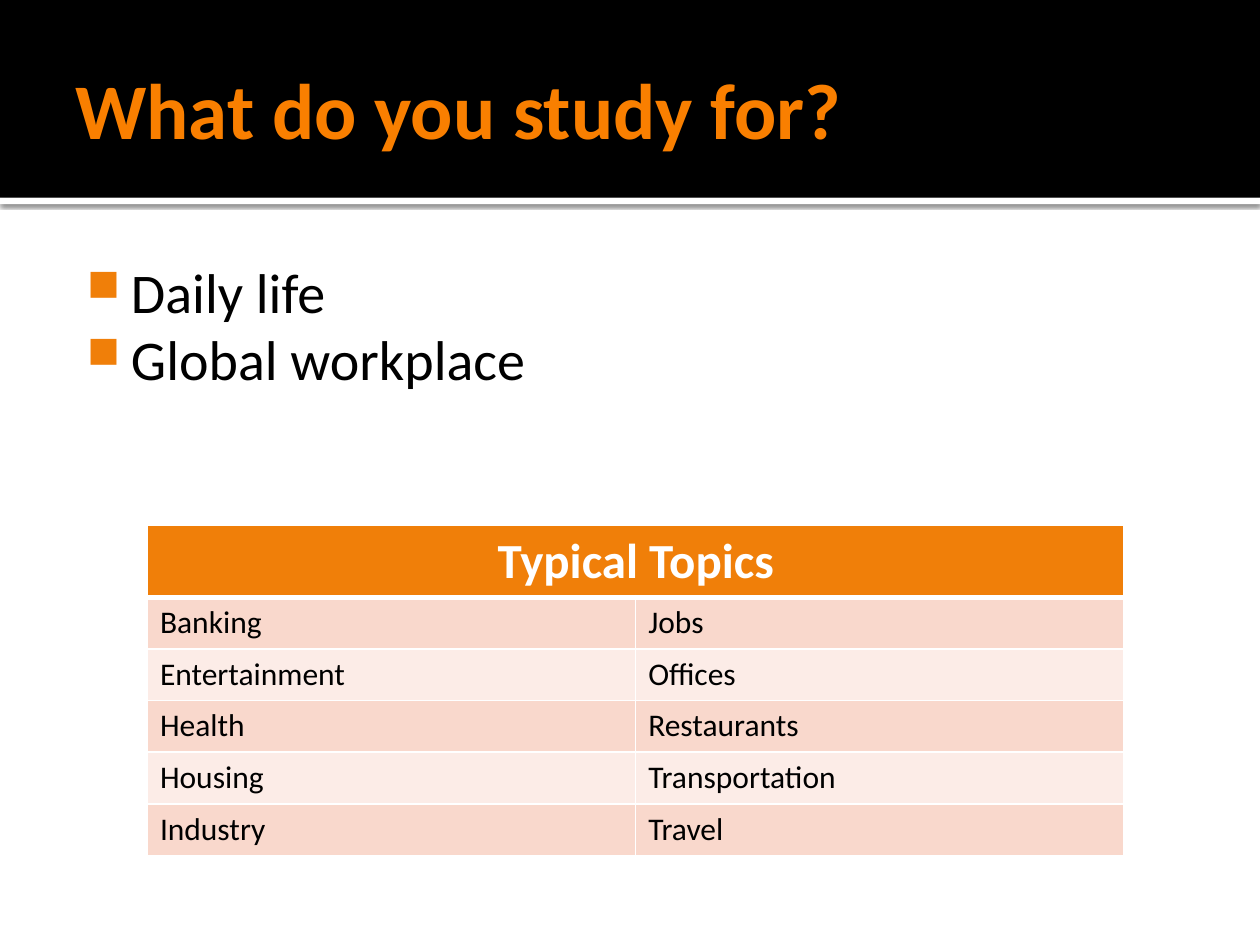
from lxml import etree
from pptx import Presentation
from pptx.dml.color import RGBColor
from pptx.enum.shapes import MSO_SHAPE
from pptx.enum.text import MSO_ANCHOR, PP_ALIGN
from pptx.oxml import parse_xml
from pptx.oxml.ns import nsdecls, qn
from pptx.util import Inches, Pt

RECT = MSO_SHAPE.RECTANGLE
MIDDLE = MSO_ANCHOR.MIDDLE
CENTER = PP_ALIGN.CENTER


class Theme:
    font = "Calibri"
    black, white = "000000", "FFFFFF"
    title, accent = "F97F00", "F07F09"
    bands = ("F9D8CC", "FCECE7")
    title_size, body_size, head_size, cell_size = 45, 32, 28, 18


def style(para, size, color, bold=False):
    font = para.font
    font.name, font.size, font.bold = Theme.font, Pt(size), bold
    font.color.rgb = RGBColor.from_string(color)


def add_frame(box, insets):
    frame = slide.shapes.add_textbox(*map(Inches, box)).text_frame
    frame.word_wrap = True
    (frame.margin_left, frame.margin_top,
     frame.margin_right, frame.margin_bottom) = map(Inches, insets)
    return frame


prs = Presentation()
prs.slide_width, prs.slide_height = Inches(10), Inches(7.5)
slide = prs.slides.add_slide(prs.slide_layouts[6])

# Header band with a white strip below it
for top, height, color in ((1.57, 0.05, Theme.white), (0, 1.57, Theme.black)):
    band = slide.shapes.add_shape(
        RECT, Inches(0), Inches(top), Inches(10), Inches(height))
    band.shadow.inherit = False
    band.fill.solid()
    band.fill.fore_color.rgb = RGBColor.from_string(color)
    band.line.fill.background()
    if color == Theme.white:
        band._element.spPr.find(qn("a:effectLst")).append(parse_xml(
            f'<a:outerShdw {nsdecls("a")} blurRad="{Pt(2.5)}" '
            f'dist="{Pt(0.8)}" dir="5400000" algn="tl" rotWithShape="0">'
            f'<a:srgbClr val="{Theme.black}"><a:alpha val="60000"/>'
            '</a:srgbClr></a:outerShdw>'))

# Title
frame = add_frame((0.5, 0.17, 9, 1.37), (0.1, 0.05, 0.05, 0.05))
frame.vertical_anchor = MIDDLE
frame.text = "What do you study for?"
style(frame.paragraphs[0], Theme.title_size, Theme.title, True)

# Bullets
frame = add_frame((0.5, 1.94, 9, 5.06), (0.06, 0.1, 0.1, 0.05))
frame.text = "Daily life\nGlobal workplace"
for para in frame.paragraphs:
    style(para, Theme.body_size, Theme.black)
    props = para._p.get_or_add_pPr()
    props.set("marL", str(Inches(0.48)))
    props.set("indent", str(Inches(-0.35)))
    marks = [parse_xml(f'<a:buClr {nsdecls("a")}>'
                       f'<a:srgbClr val="{Theme.accent}"/></a:buClr>'),
             parse_xml(f'<a:buSzPct {nsdecls("a")} val="80000"/>'),
             parse_xml(f'<a:buChar {nsdecls("a")} char="■"/>')]
    for spot, mark in enumerate(marks):
        props.insert(spot, mark)

# Topics table
rows = [("Typical Topics", ""), ("Banking", "Jobs"),
        ("Entertainment", "Offices"), ("Health", "Restaurants"),
        ("Housing", "Transportation"), ("Industry", "Travel")]
table = slide.shapes.add_table(
    len(rows), 2, Inches(1.17), Inches(4.17), Inches(7.75), Inches(2.62)).table
table.cell(0, 0).merge(table.cell(0, 1))
for r, words in enumerate(rows):
    head = r == 0
    table.rows[r].height = Inches(0.57 if head else 0.41)
    for c, word in enumerate(words):
        cell = table.cell(r, c)
        cell.fill.solid()
        cell.fill.fore_color.rgb = RGBColor.from_string(
            Theme.accent if head else Theme.bands[(r - 1) % 2])
        cell.text = word
        para = cell.text_frame.paragraphs[0]
        if head:
            para.alignment = CENTER
            style(para, Theme.head_size, Theme.white, True)
        else:
            style(para, Theme.cell_size, Theme.black)

        # White rules, thicker around the header's lower edge
        props = cell._tc.get_or_add_tcPr()
        for spot, side in enumerate("LRTB"):
            thick = (r, side) in ((0, "B"), (1, "T"))
            rule = etree.Element(qn(f"a:ln{side}"), w=str(Pt(3 if thick else 1)))
            fill = etree.SubElement(rule, qn("a:solidFill"))
            etree.SubElement(fill, qn("a:srgbClr"), val=Theme.white)
            props.insert(spot, rule)

prs.save("out.pptx")
